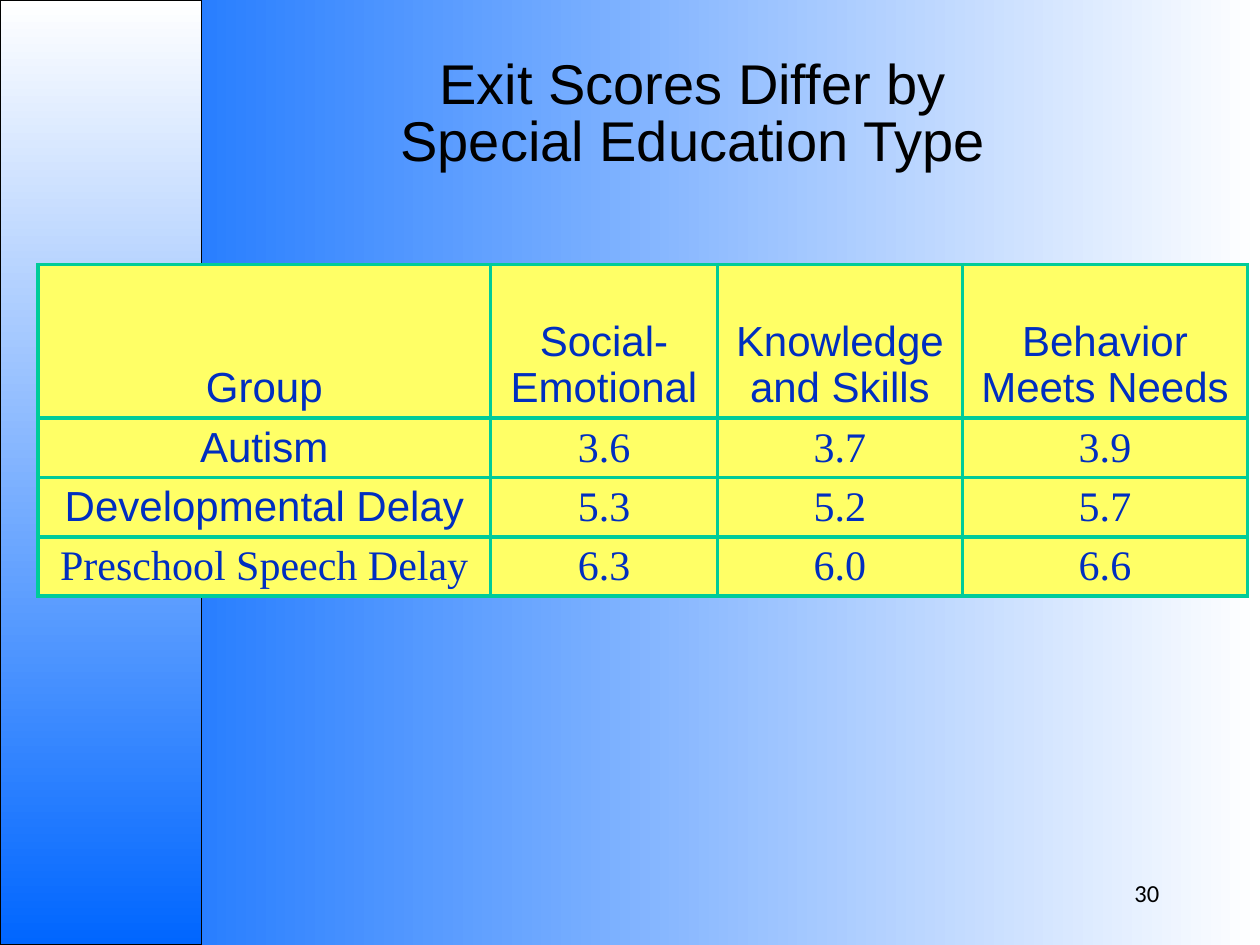
import dataclasses

import pptx
import pptx.dml.color
import pptx.enum.shapes
import pptx.enum.text
import pptx.oxml
import pptx.oxml.ns
import pptx.util

ALIGN = pptx.enum.text.PP_ALIGN
ANCHOR = pptx.enum.text.MSO_ANCHOR
TITLE_ONLY = 5


@dataclasses.dataclass(frozen=True)
class Theme:
    blue: str = "0066FF"
    white: str = "FFFFFF"
    black: str = "000000"
    cell: str = "FFFF66"
    border: str = "00CC99"
    table_text: str = "002EC0"
    sans: str = "Arial"
    serif: str = "Times New Roman"
    number_font: str = "Calibri"
    title_size: int = 32
    table_size: int = 24
    number_size: int = 14
    border_width: float = 2.25
    outline_width: float = 0.75


THEME = Theme()
WIDTH, HEIGHT = pptx.util.Inches(10), pptx.util.Inches(7.5)

# Boxes are left, top, width and height as shares of the slide.
SIDEBAR_BOX = (0, 0, 0.16, 1)
TITLE_BOX = (0.19, 0.07, 0.72, 0.12)
TABLE_BOX = (0.03, 0.28, 0.96, 0.35)
NUMBER_BOX = (0.72, 0.91, 0.21, 0.07)

COLUMN_SHARES = (3.58, 1.79, 1.94, 2.25)
ROW_SHARES = (1.22, 0.47, 0.47, 0.47)
SCORES = (
    ("Group", "Social-Emotional", "Knowledge\nand Skills", "Behavior\nMeets Needs"),
    ("Autism", "3.6", "3.7", "3.9"),
    ("Developmental Delay", "5.3", "5.2", "5.7"),
    ("Preschool Speech Delay", "6.3", "6.0", "6.6"),
)
SERIF_LABEL = "Preschool Speech Delay"


def rgb(value):
    return pptx.dml.color.RGBColor.from_string(value)


def scale(box):
    """Turn shares of the slide into lengths."""
    return [round(share * side) for share, side in zip(box, (WIDTH, HEIGHT) * 2)]


def assign(target, values):
    for name, value in values.items():
        setattr(target, name, value)


def format_text(frame, font, size, color, **paragraph_values):
    for paragraph in frame.paragraphs:
        assign(paragraph, paragraph_values)
        for run in paragraph.runs:
            assign(run.font, {"name": font, "size": pptx.util.Pt(size)})
            run.font.color.rgb = rgb(color)


def fill_gradient(fill, colors, angle):
    fill.gradient()
    fill.gradient_angle = angle
    for stop, color in zip(fill.gradient_stops, colors):
        stop.color.rgb = rgb(color)


def add_sidebar(slide, box):
    sidebar = slide.shapes.add_shape(
        pptx.enum.shapes.MSO_SHAPE.RECTANGLE, *scale(box))
    sidebar.shadow.inherit = False
    fill_gradient(sidebar.fill, (THEME.white, THEME.blue), 270)
    sidebar.line.color.rgb = rgb(THEME.black)
    sidebar.line.width = pptx.util.Pt(THEME.outline_width)


def place_title(slide, box):
    title = slide.shapes.title
    assign(title, dict(zip(("left", "top", "width", "height"), scale(box))))
    frame = title.text_frame
    frame.text = "Exit Scores Differ by\vSpecial Education Type"
    sides = ("left", "top", "right", "bottom")
    assign(frame, {f"margin_{side}": pptx.util.Inches(0.05) for side in sides})
    assign(frame, {"vertical_anchor": ANCHOR.BOTTOM, "word_wrap": True,
                   "auto_size": pptx.enum.text.MSO_AUTO_SIZE.NONE})
    format_text(frame, THEME.sans, THEME.title_size, THEME.black,
                alignment=ALIGN.CENTER, line_spacing=0.85)


def add_borders(cell):
    properties = cell._tc.get_or_add_tcPr()
    for side in ("lnL", "lnR", "lnT", "lnB"):
        properties.append(pptx.oxml.parse_xml(
            f'<a:{side} {pptx.oxml.ns.nsdecls("a")}'
            f' w="{pptx.util.Pt(THEME.border_width)}">'
            f'<a:solidFill><a:srgbClr val="{THEME.border}"/></a:solidFill>'
            f'</a:{side}>'))


def format_cell(cell, text, font):
    add_borders(cell)
    cell.fill.solid()
    cell.fill.fore_color.rgb = rgb(THEME.cell)
    cell.vertical_anchor = ANCHOR.BOTTOM
    cell.text_frame.text = text
    format_text(cell.text_frame, font, THEME.table_size, THEME.table_text,
                alignment=ALIGN.CENTER)


def add_score_table(slide, box):
    left, top, width, height = scale(box)
    table = slide.shapes.add_table(
        len(SCORES), len(COLUMN_SHARES), left, top, width, height).table
    assign(table, {"first_row": False, "horz_banding": False})
    for column, share in zip(table.columns, COLUMN_SHARES):
        column.width = round(width * share / sum(COLUMN_SHARES))
    for row, share in zip(table.rows, ROW_SHARES):
        row.height = round(height * share / sum(ROW_SHARES))
    for row_index, texts in enumerate(SCORES):
        for column_index, text in enumerate(texts):
            is_score = row_index > 0 and column_index > 0
            font = THEME.serif if is_score or text == SERIF_LABEL else THEME.sans
            format_cell(table.cell(row_index, column_index), text, font)


def add_slide_number(slide, box):
    frame = slide.shapes.add_textbox(*scale(box)).text_frame
    frame.text = "30"
    assign(frame, {"word_wrap": True, "vertical_anchor": ANCHOR.MIDDLE})
    format_text(frame, THEME.number_font, THEME.number_size, THEME.black,
                alignment=ALIGN.RIGHT)


def main():
    presentation = pptx.Presentation()
    assign(presentation, {"slide_width": WIDTH, "slide_height": HEIGHT})
    slide = presentation.slides.add_slide(presentation.slide_layouts[TITLE_ONLY])
    fill_gradient(slide.background.fill, (THEME.blue, THEME.white), 0)
    add_sidebar(slide, SIDEBAR_BOX)
    place_title(slide, TITLE_BOX)
    add_score_table(slide, TABLE_BOX)
    add_slide_number(slide, NUMBER_BOX)
    presentation.save("out.pptx")


if __name__ == "__main__":
    main()
